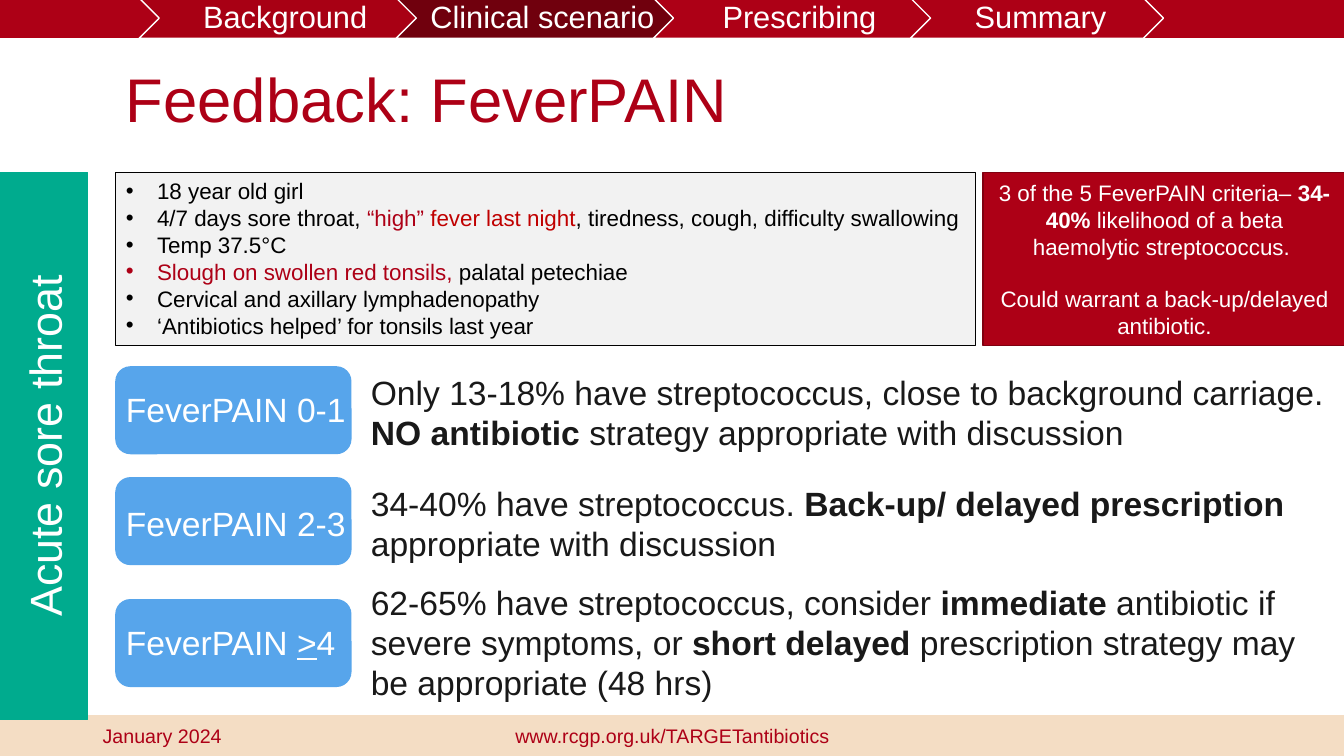
from pptx import Presentation
from pptx.dml.color import RGBColor
from pptx.enum.shapes import MSO_SHAPE
from pptx.enum.text import MSO_ANCHOR, PP_ALIGN
from pptx.util import Inches, Pt
from lxml import etree

RECT, ROUND, CHEVRON = MSO_SHAPE.RECTANGLE, MSO_SHAPE.ROUNDED_RECTANGLE, MSO_SHAPE.CHEVRON
TOP, MIDDLE = MSO_ANCHOR.TOP, MSO_ANCHOR.MIDDLE
LEFT, CENTER = PP_ALIGN.LEFT, PP_ALIGN.CENTER

# Content: a paragraph is a list of (text, style) runs
TITLE = "Feedback: FeverPAIN"
TOPIC = "Acute sore throat"
FOOTER = [("www.rcgp.org.uk/TARGETantibiotics", 4.42, 4.5, CENTER),
          ("January 2024", 0.92, 3, LEFT)]
STEPS = [("Background", "step", 2.83), ("Clinical scenario", "active", 2.83),
         ("Prescribing", "red", 2.83), ("Summary", "red", 2.51)]
CASE = [
    [("18 year old girl", "")],
    [("4/7 days sore throat, ", ""), ("“high” ", "red"), ("fever last night", "alert"),
     (", tiredness, cough, difficulty swallowing", "")],
    [("Temp 37.5°C", "")],
    [("Slough on swollen red tonsils, ", "red"), ("palatal petechiae", "")],
    [("Cervical and axillary lymphadenopathy", "")],
    [("‘Antibiotics helped’ for tonsils last year", "")],
]
RESULT = [
    [("3 of the 5 FeverPAIN criteria– ", ""), ("34-40% ", "bold"),
     ("likelihood of a beta haemolytic streptococcus. ", "")],
    [("Could warrant a back-up/delayed antibiotic.", "")],
]
# Score label, pill top, label top, advice top, advice width, advice height, advice
SCORES = [
    ([("FeverPAIN 0-1", "")], 3.64, 3.81, 3.64, 9.75, 0.91,
     [("Only 13-18% have streptococcus, close to background carriage. ", ""),
      ("NO antibiotic ", "bold"), ("strategy appropriate with discussion", "")]),
    ([("FeverPAIN 2-3", "")], 4.74, 4.94, 4.74, 9.75, 0.91,
     [("34-40% have streptococcus. ", ""), ("Back-up/ delayed prescription", "bold"),
      (" appropriate with discussion", "")]),
    ([("FeverPAIN ", ""), (">", "under"), ("4", "")], 5.95, 6.12, 5.72, 9.5, 1.31,
     [("62-65% have streptococcus, consider ", ""), ("immediate ", "bold"),
      ("antibiotic if severe symptoms, or ", ""), ("short delayed ", "bold"),
      ("prescription strategy may be appropriate (48 hrs)", "")]),
]

THEME = {
    "font": "Arial",
    "color": {"red": "AD0016", "step": "A80014", "active": "70000D", "edge": "800010",
              "alert": "C00000", "sand": "F4DDC4", "green": "00AB8E", "blue": "57A5EB",
              "grey": "F2F2F2", "white": "FFFFFF", "black": "000000", "ink": "191919"},
    "size": {"title": 44, "topic": 32, "body": 24, "step": 22, "case": 16, "foot": 14},
}

deck = Presentation()
deck.slide_width, deck.slide_height = Inches(13.33), Inches(7.5)
slide = deck.slides.add_slide(deck.slide_layouts[6])


def color(name):
    return RGBColor.from_string(THEME["color"][name])


def add_box(kind, left, top, width, height, fill, line=None, weight=1):
    box = slide.shapes.add_shape(kind, Inches(left), Inches(top), Inches(width), Inches(height))
    box.shadow.inherit = False
    box.fill.solid()
    box.fill.fore_color.rgb = color(fill)
    box.line.color.rgb = color(line or fill)
    box.line.width = Pt(weight)
    return box


def add_text(left, top, width, height):
    return slide.shapes.add_textbox(Inches(left), Inches(top), Inches(width), Inches(height))


def add_bullet(para, indent):
    props = para._p.get_or_add_pPr()
    props.set("marL", str(indent))
    props.set("indent", str(-indent))
    space = "{http://schemas.openxmlformats.org/drawingml/2006/main}"
    etree.SubElement(props, space + "buFont").set("typeface", "Arial")
    etree.SubElement(props, space + "buChar").set("char", "•")


def write(box, paras, size, tone, align=LEFT, anchor=TOP, bullet=False):
    frame = box.text_frame
    frame.word_wrap = True
    frame.vertical_anchor = anchor
    for i, runs in enumerate(paras):
        para = frame.add_paragraph() if i else frame.paragraphs[0]
        para.alignment = align
        if bullet:
            add_bullet(para, Inches(0.31))
        for text, style in runs:
            run = para.add_run()
            run.text = text
            font = run.font
            font.name = THEME["font"]
            font.size = Pt(THEME["size"][size])
            font.bold = style == "bold"
            font.underline = style == "under"
            font.color.rgb = color(style if style in THEME["color"] else tone)
    return frame


# Bands and footer
add_box(RECT, 0, 7.1, 13.33, 0.4, "sand")
add_box(RECT, 0, -0.01, 13.33, 0.38, "red")
for text, left, width, align in FOOTER:
    write(add_text(left, 7.13, width, 0.4), [[(text, "")]], "foot", "red", align)

# Title
frame = write(add_text(1.15, 0.52, 9.61, 1), [[(TITLE, "")]], "title", "red", anchor=MIDDLE)
frame.paragraphs[0].line_spacing = 0.9

# Topic tab, reading upwards
tab = add_box(RECT, 0, 1.71, 0.87, 5.43, "green")
frame = write(tab, [[(TOPIC, "")]], "topic", "white", CENTER, MIDDLE)
frame._txBody.bodyPr.set("vert", "vert270")

# Case and result panels
case = add_box(RECT, 1.15, 1.71, 8.53, 1.72, "grey", "black", 0.75)
write(case, CASE, "case", "black", bullet=True)
result = add_box(RECT, 9.75, 1.71, 3.6, 1.72, "red", "edge")
frame = write(result, RESULT, "case", "white", CENTER, MIDDLE)
frame.paragraphs[1].space_before = Pt(18.4)

# Score rows
for label, pill, name, top, width, height, advice in SCORES:
    add_box(ROUND, 1.15, pill, 2.33, 0.86, "blue")
    write(add_text(1.15, name, 2.62, 0.5), [label], "body", "white")
    write(add_text(3.58, top, width, height), [advice], "body", "ink")

# Progress chevrons, each overlapping the one before
left = 1.38
for text, fill, width in STEPS:
    step = add_box(CHEVRON, left, -0.02, width, 0.4, fill, "white")
    frame = write(step, [[(text, "")]], "step", "white", CENTER, MIDDLE)
    frame.margin_left = Inches(0.1)
    frame.margin_right = frame.margin_top = frame.margin_bottom = Inches(0.03)
    frame.paragraphs[0].line_spacing = 0.9
    left += width - 0.28

deck.save("out.pptx")
